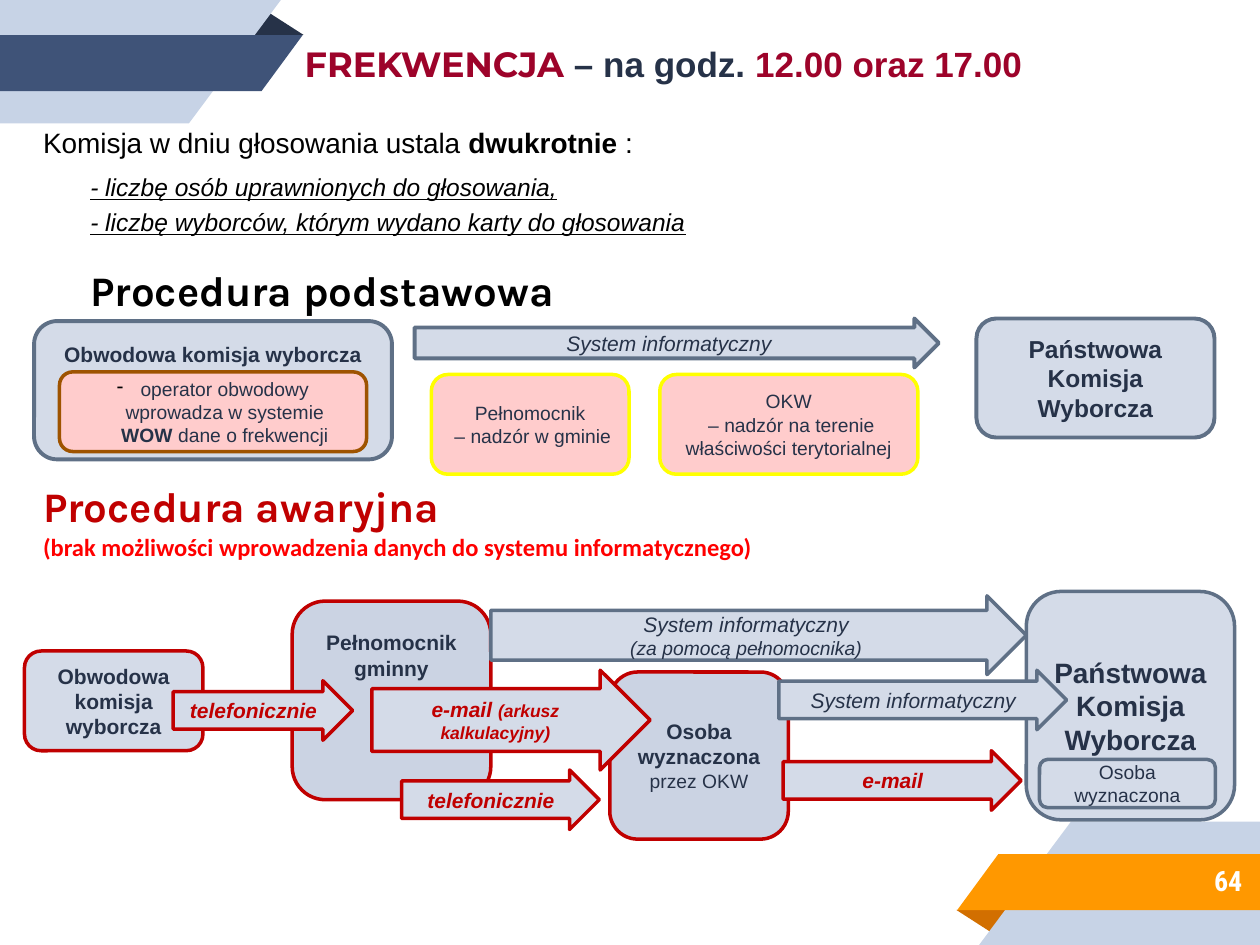
from dataclasses import dataclass

from lxml.etree import SubElement
from pptx import Presentation
from pptx.dml.color import RGBColor
from pptx.enum.shapes import MSO_SHAPE as Shape
from pptx.enum.text import MSO_ANCHOR as Anchor, PP_ALIGN as Align
from pptx.oxml.ns import qn
from pptx.util import Pt


@dataclass(frozen=True)
class Theme:
    ink: str = "263248"
    black: str = "000000"
    white: str = "FFFFFF"
    navy: str = "3F5378"
    pale: str = "C7D3E6"
    orange: str = "FF9800"
    rust: str = "D26F00"
    maroon: str = "9D032A"
    red: str = "C00000"
    alert: str = "FF0000"
    panel: str = "D4DBE8"
    panel_dark: str = "CBD3E3"
    pink: str = "FFCCCC"
    slate: str = "5F7086"
    brown: str = "9E5300"
    yellow: str = "FFFF00"
    heading: int = 24
    title: int = 20
    lead: int = 16
    sub: int = 14
    label: int = 12
    small: int = 11
    tiny: int = 10


theme = Theme()


def write(frame, text, same_line=False, size=theme.label, color=theme.ink,
          font="Arial", bold=False, italic=False, underline=False,
          align=Align.CENTER, left=0, before=0, spacing=None, bullet=None):
    """Add text as a new paragraph, or as a further run of the last one."""
    if same_line or not frame.text:
        paragraph = frame.paragraphs[-1]
    else:
        paragraph = frame.add_paragraph()
    if not same_line:
        paragraph.alignment = align
        paragraph.space_before = Pt(before)
        if spacing:
            paragraph.line_spacing = spacing
        properties = paragraph._p.get_or_add_pPr()
        properties.set("marL", str(Pt(left)))
        if bullet:
            properties.set("indent", str(-Pt(left)))
            bullet_color = SubElement(properties, qn("a:buClr"))
            SubElement(bullet_color, qn("a:srgbClr"), val=theme.black)
            SubElement(properties, qn("a:buChar"), char=bullet)
    run = paragraph.add_run()
    run.text = text
    run.font.name, run.font.size = font, Pt(size)
    run.font.bold, run.font.italic, run.font.underline = bold, italic, underline
    run.font.color.rgb = RGBColor.from_string(color)


def paint(shape, fill, line=None, weight=2):
    shape.shadow.inherit = False
    shape.fill.solid()
    shape.fill.fore_color.rgb = RGBColor.from_string(fill)
    if line:
        shape.line.color.rgb = RGBColor.from_string(line)
        shape.line.width = Pt(weight)
    else:
        shape.line.fill.background()


deck = Presentation()
deck.slide_width, deck.slide_height = Pt(720), Pt(540)
slide = deck.slides.add_slide(deck.slide_layouts[6])
shapes = slide.shapes

# Corner ribbons: the lower right one is the upper left one turned half round
fold = [(142.5, 20), (152.5, 6.5), (173.5, 20)]
back = [(0, 0), (160.5, 0), (108, 70.5), (0, 70.5)]
band = [(0, 20), (173, 20), (149.5, 52), (0, 52)]
for turned, colors in ((False, (theme.ink, theme.pale, theme.navy)),
                       (True, (theme.rust, theme.pale, theme.orange))):
    for outline, color in zip((fold, back, band), colors):
        points = [(Pt(720 - x), Pt(540 - y)) if turned else (Pt(x), Pt(y))
                  for x, y in outline]
        builder = shapes.build_freeform(*points[0])
        builder.add_line_segments(points[1:])
        paint(builder.convert_to_shape(), color)

# Title
title = shapes.add_textbox(Pt(99.5), Pt(21), Pt(663), Pt(32)).text_frame
title.word_wrap = True
title_format = dict(size=theme.title, bold=True, align=Align.LEFT, left=67.5)
write(title, "FREKWENCJA ", font="Montserrat", color=theme.maroon, **title_format)
write(title, "– na godz. ", same_line=True, **title_format)
write(title, "12.00 oraz 17.00", same_line=True, color=theme.maroon, **title_format)

# Introduction and the two procedure headings
body = shapes.add_textbox(Pt(17.5), Pt(70.5), Pt(685), Pt(438)).text_frame
body.word_wrap = True
plain = dict(color=theme.black, align=Align.LEFT, spacing=0.9)
write(body, "Komisja w dniu głosowania ustala ", size=theme.lead, **plain)
write(body, "dwukrotnie ", same_line=True, size=theme.lead, bold=True, **plain)
write(body, ":", same_line=True, size=theme.lead, **plain)
for item, gap in (("- liczbę osób uprawnionych do głosowania,", 9),
                  ("- liczbę wyborców, którym wydano karty do głosowania", 5)):
    write(body, item, size=theme.sub, italic=True, underline=True,
          left=27, before=gap, **plain)
heading = dict(size=theme.heading, font="Karla", bold=True)
write(body, "Procedura podstawowa", left=27, before=19, **heading, **plain)
write(body, "Procedura awaryjna", before=97.5, **heading,
      **{**plain, "color": theme.red})
write(body, "(brak możliwości wprowadzenia danych do systemu informatycznego)",
      size=theme.sub, font="Calibri", bold=True, before=2,
      **{**plain, "color": theme.alert})

# Boxes and arrows of both procedures, from back to front
box, arrow = Shape.ROUNDED_RECTANGLE, Shape.RIGHT_ARROW
strong = dict(bold=True)
small = dict(size=theme.small)
channel = dict(italic=True)
urgent = dict(bold=True, italic=True, color=theme.red)
more = dict(same_line=True)
system = ("System informatyczny", channel)
by_phone = ("telefonicznie", urgent)
commission = "Państwowa Komisja Wyborcza"

# kind, (left, top, width, height), fill, line, weight, top margin, texts;
# a top margin of None centres the text vertically
flow = [
    # Basic procedure
    (box, (19.5, 183.5, 204.5, 79), theme.panel, theme.slate, 2.25, 8,
     [("Obwodowa komisja wyborcza", strong)]),
    (box, (558, 182, 136, 68), theme.panel, theme.slate, 2.25, None,
     [(commission, dict(bold=True, size=theme.sub))]),
    (box, (34, 212.5, 175.5, 45.5), theme.pink, theme.brown, 2, None,
     [("operator obwodowy wprowadza w systemie", dict(small, left=13.5, bullet="-")),
      (" WOW", small | more | strong),
      (" dane o frekwencji", small | more)]),
    (box, (246.5, 214, 113, 57), theme.pink, theme.yellow, 2, None,
     [("Pełnomocnik", small), (" – nadzór w gminie", small)]),
    (box, (377, 214, 147.5, 57), theme.pink, theme.yellow, 2, None,
     [("OKW", small), (" – nadzór na terenie właściwości terytorialnej", small)]),
    (arrow, (237, 182, 299.5, 28), theme.panel, theme.slate, 2.25, None, [system]),
    # Emergency procedure
    (box, (14, 372, 102, 57), theme.panel, theme.red, 2, None,
     [("Obwodowa komisja wyborcza", strong)]),
    (box, (167, 343.5, 113.5, 113.5), theme.panel_dark, theme.red, 2, 11,
     [("Pełnomocnik gminny", strong)]),
    (box, (586.5, 338, 119, 130.5), theme.panel, theme.slate, 2, None,
     [(commission, dict(bold=True, size=theme.lead))]),
    (box, (348.5, 384, 102, 95.5), theme.panel_dark, theme.red, 2, None,
     [("Osoba wyznaczona ", strong), ("przez OKW", small | more)]),
    (arrow, (280.5, 340.5, 306, 45), theme.panel, theme.slate, 2, None,
     [system, ("(za pomocą pełnomocnika)", channel | small)]),
    (arrow, (445, 383, 164.5, 34), theme.panel, theme.slate, 2, None, [system]),
    (box, (594, 434, 100.5, 27.5), theme.panel, theme.slate, 2, None,
     [("Osoba wyznaczona", small)]),
    (arrow, (447.5, 429, 136, 34), theme.panel, theme.red, 2, None,
     [("e-mail", urgent)]),
    (arrow, (99, 389, 102.5, 34), theme.panel, theme.red, 2, None, [by_phone]),
    (arrow, (212.5, 383, 159, 57), theme.panel, theme.red, 2, None,
     [("e-mail ", urgent),
      ("(arkusz kalkulacyjny)", urgent | more | dict(size=theme.tiny))]),
    (arrow, (229.5, 440, 113, 34), theme.panel, theme.red, 2, None, [by_phone]),
]
for kind, place, fill, line, weight, top_margin, texts in flow:
    step = shapes.add_shape(kind, *map(Pt, place))
    paint(step, fill, line, weight)
    if kind == arrow:
        step.adjustments[0] = 0.63
    frame = step.text_frame
    frame.word_wrap = True
    frame.vertical_anchor = Anchor.MIDDLE
    if top_margin is not None:
        frame.vertical_anchor = Anchor.TOP
        frame.margin_top = Pt(top_margin)
    for text, style in texts:
        write(frame, text, **style)

# Page number
page_number = shapes.add_textbox(Pt(600), Pt(486.5), Pt(117), Pt(33)).text_frame
page_number.word_wrap = True
page_number.vertical_anchor = Anchor.MIDDLE
write(page_number, "64", size=theme.lead, font="Roboto Condensed", bold=True,
      color=theme.white, align=Align.RIGHT)

deck.save("out.pptx")
